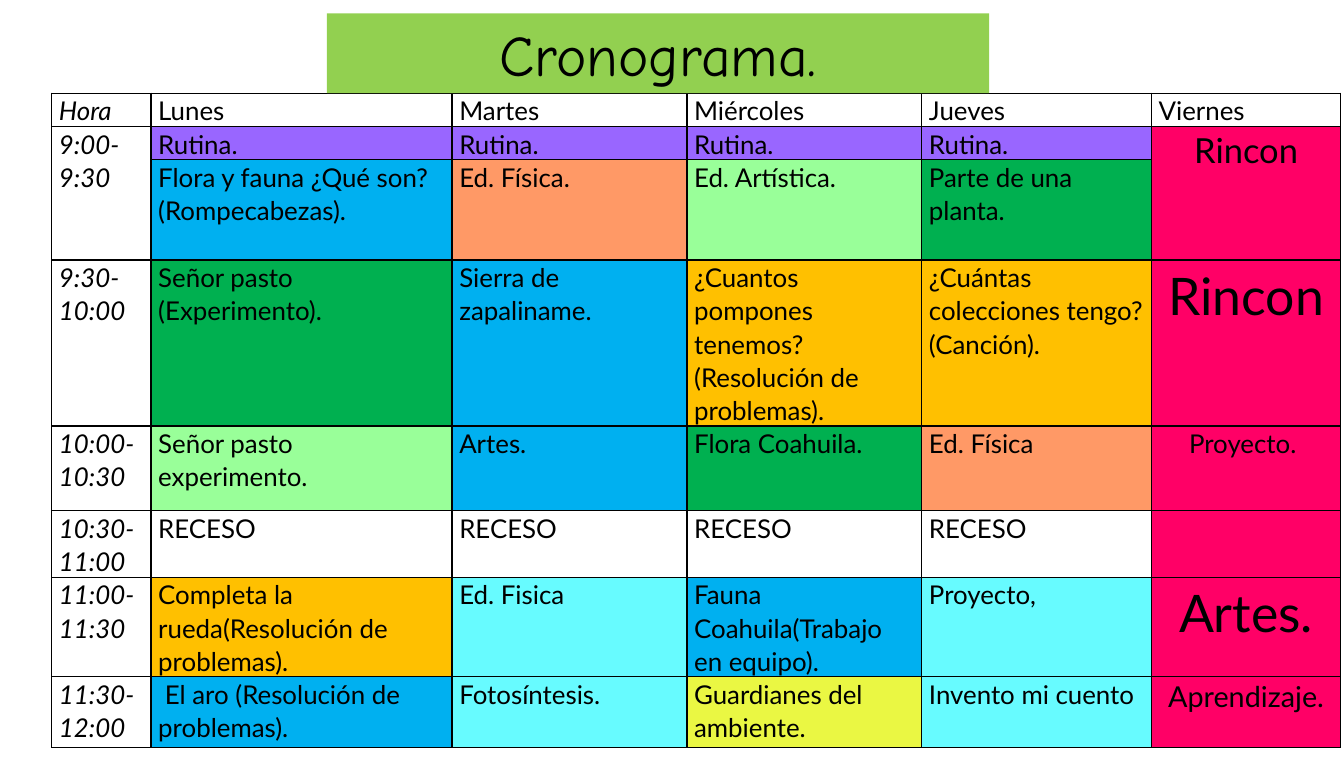
import pptx
import pptx.dml.color
import pptx.enum.shapes
import pptx.enum.text
import pptx.oxml.ns
import pptx.util
from lxml import etree
from pptx.util import Inches

COLORS = {
    "black": "000000",
    "title": "92D050",
    "purple": "9966FF",
    "pink": "FF0066",
    "blue": "00B0F0",
    "orange": "FF9966",
    "mint": "99FF99",
    "green": "00B050",
    "gold": "FFC000",
    "cyan": "67FBFF",
    "yellow": "EAF743",
}
COLUMN_WIDTHS = [0.96, 2.91, 2.27, 2.27, 2.22, 1.83]
ROW_HEIGHTS = [0.32, 0.32, 0.97, 1.6, 0.82, 0.64, 0.96, 0.68]
DAYS = ["Lunes", "Martes", "Miércoles", "Jueves"]
ROUTINE = ("Rutina.", "purple")
RECESS = ("RECESO", None)
SCHEDULE = [
    ["Hora", *[(day, None) for day in DAYS], ("Viernes", None)],
    ["9:00-9:30", *[ROUTINE] * 4, ("Rincon", "pink", 24)],
    ["", ("Flora y fauna ¿Qué son? (Rompecabezas).", "blue"), ("Ed. Física.", "orange"),
     ("Ed. Artística.", "mint"), ("Parte de una planta.", "green"), ("", "pink")],
    ["9:30-10:00", ("Señor pasto (Experimento).", "green"), ("Sierra de zapaliname.", "blue"),
     ("¿Cuantos pompones tenemos? (Resolución de problemas).", "gold"),
     ("¿Cuántas colecciones tengo? (Canción).", "gold"), ("Rincon", "pink", 36)],
    ["10:00-10:30", ("Señor pasto experimento.", "mint"), ("Artes.", "blue"),
     ("Flora Coahuila.", "green"), ("Ed. Física", "orange"), ("Proyecto. ", "pink")],
    ["10:30-11:00", *[RECESS] * 4, ("", "pink")],
    ["11:00-11:30", ("Completa la rueda(Resolución de problemas).", "gold"),
     ("Ed. Fisica", "cyan"), ("Fauna Coahuila(Trabajo en equipo).", "blue"),
     ("Proyecto,", "cyan"), ("Artes.", "pink", 36)],
    ["11:30-12:00", (" El aro (Resolución de problemas).", "blue"), ("Fotosíntesis.", "cyan"),
     ("Guardianes del ambiente.", "yellow"), ("Invento mi cuento", "cyan"),
     ("Aprendizaje.", "pink", 20)],
]


def rgb(name):
    return pptx.dml.color.RGBColor.from_string(COLORS[name])


def set_attributes(target, values):
    for name, value in values.items():
        setattr(target, name, value)


def format_font(font, name, size, italic=False):
    values = {"name": name, "size": pptx.util.Pt(size), "bold": False, "italic": italic}
    set_attributes(font, values)
    font.color.rgb = rgb("black")


def add_borders(cell):
    properties = cell._tc.get_or_add_tcPr()
    qn = pptx.oxml.ns.qn
    for side in ("lnL", "lnR", "lnT", "lnB"):
        line = etree.SubElement(properties, qn(f"a:{side}"), w=str(pptx.util.Pt(1)))
        fill = etree.SubElement(line, qn("a:solidFill"))
        etree.SubElement(fill, qn("a:srgbClr"), val=COLORS["black"])


def fill_cell(cell, text, color=None, size=18, italic=False):
    margin = Inches(0.07)
    set_attributes(cell, {"margin_left": margin, "margin_right": margin,
                          "margin_top": 0, "margin_bottom": 0})
    add_borders(cell)
    if color:
        cell.fill.solid()
        cell.fill.fore_color.rgb = rgb(color)
    else:
        cell.fill.background()
    paragraph = cell.text_frame.paragraphs[0]
    paragraph.line_spacing = 1.07
    if color == "pink":
        paragraph.alignment = pptx.enum.text.PP_ALIGN.CENTER
    if text:
        run = paragraph.add_run()
        run.text = text
        format_font(run.font, "Lato", size, italic)


def add_schedule(slide):
    frame = slide.shapes.add_table(
        len(ROW_HEIGHTS), len(COLUMN_WIDTHS), Inches(0.5), Inches(0.9),
        Inches(sum(COLUMN_WIDTHS)), Inches(sum(ROW_HEIGHTS)))
    table = frame.table
    set_attributes(table, {"first_row": False, "horz_banding": False})
    for column, width in zip(table.columns, COLUMN_WIDTHS):
        column.width = Inches(width)
    for row, height in zip(table.rows, ROW_HEIGHTS):
        row.height = Inches(height)
    for row, (hour, *activities) in zip(table.rows, SCHEDULE):
        hour_cell, *activity_cells = row.cells
        fill_cell(hour_cell, hour, italic=True)
        for cell, activity in zip(activity_cells, activities):
            fill_cell(cell, *activity)
    for column in (0, len(COLUMN_WIDTHS) - 1):
        table.cell(1, column).merge(table.cell(2, column))


def add_title(slide, text):
    shape = slide.shapes.add_shape(
        pptx.enum.shapes.MSO_SHAPE.RECTANGLE,
        Inches(3.16), Inches(0.13), Inches(6.4), Inches(0.77))
    shape.shadow.inherit = False
    shape.fill.solid()
    shape.fill.fore_color.rgb = rgb("title")
    shape.line.fill.background()
    paragraph = shape.text_frame.paragraphs[0]
    paragraph.alignment = pptx.enum.text.PP_ALIGN.CENTER
    run = paragraph.add_run()
    run.text = text
    format_font(run.font, "Comic Neue", 40)


def main():
    presentation = pptx.Presentation()
    set_attributes(presentation, {"slide_width": Inches(12.99), "slide_height": Inches(7.5)})
    slide = presentation.slides.add_slide(presentation.slide_layouts[6])
    add_schedule(slide)
    add_title(slide, "Cronograma.")
    presentation.save("out.pptx")


if __name__ == "__main__":
    main()
